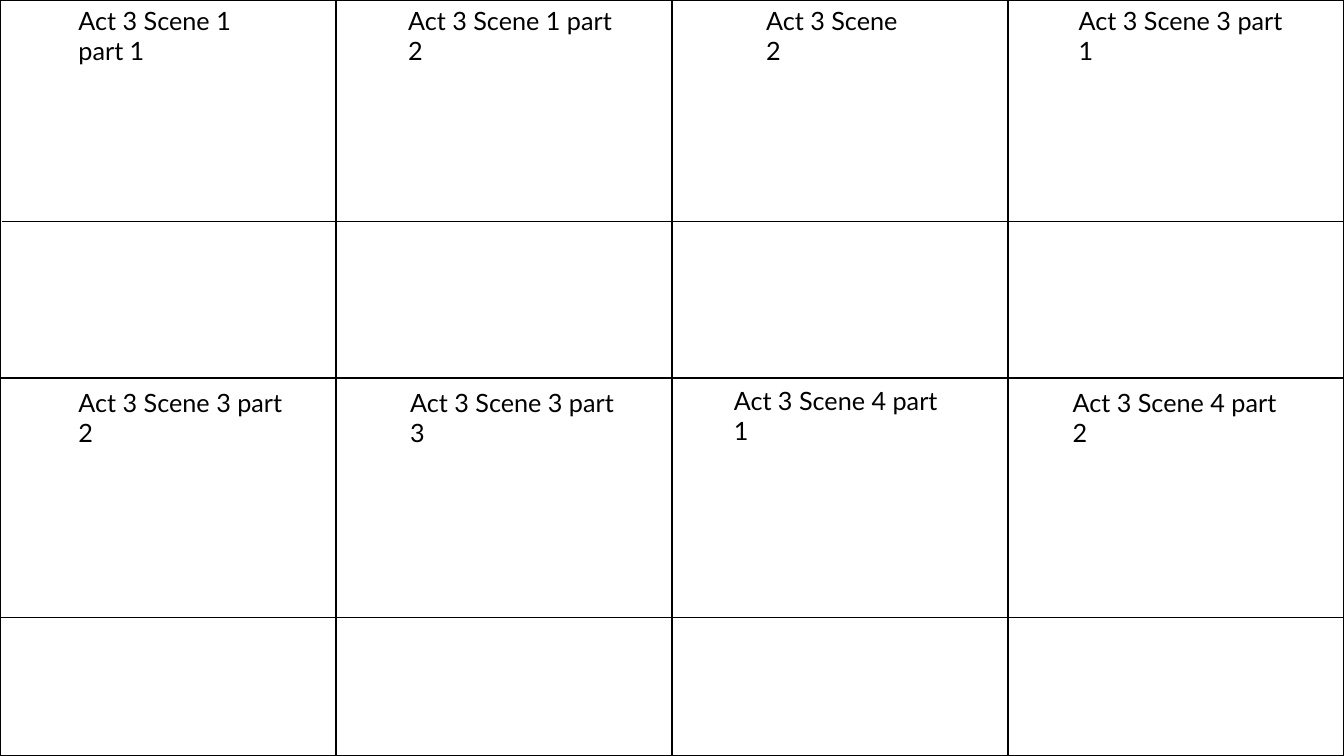
from lxml.etree import SubElement
from pptx import Presentation
from pptx.dml.color import RGBColor
from pptx.enum.shapes import MSO_CONNECTOR as Connector
from pptx.enum.text import MSO_AUTO_SIZE as AutoSize
from pptx.oxml.ns import qn
from pptx.util import Inches, Pt

WIDTH, HEIGHT = 13.33, 7.5
BLACK, WHITE = "000000", "FFFFFF"
LABEL_FRAME = {"word_wrap": True, "auto_size": AutoSize.SHAPE_TO_FIT_TEXT}
LABEL_FONT = {"name": "Lato", "size": Pt(18)}
SCENES = [
    ("Act 3 Scene 1 part 1", 0.68, 0, 2.18),
    ("Act 3 Scene 1 part 2", 3.95, 0, 2.23),
    ("Act 3 Scene 2", 7.5, 0, 1.58),
    ("Act 3 Scene 3 part 1", 10.6, 0, 2.22),
    ("Act 3 Scene 3 part 2", 0.68, 3.79, 2.28),
    ("Act 3 Scene 3 part 3", 3.97, 3.79, 2.27),
    ("Act 3 Scene 4 part 1", 7.18, 3.77, 2.23),
    ("Act 3 Scene 4 part 2", 10.54, 3.79, 2.28),
]
CAPTION_LINES = [(0.02, 2.2), (0, 6.12)]


def color(value):
    """Turn a hex string into a colour."""
    return RGBColor.from_string(value)


def apply_format(target, values):
    """Set each named attribute on the target."""
    for name, value in values.items():
        setattr(target, name, value)


def format_cell(cell):
    """Give a cell a white fill and thin black borders."""
    properties = cell._tc.get_or_add_tcPr()
    for side in ("lnL", "lnR", "lnT", "lnB"):
        border = SubElement(properties, qn(f"a:{side}"), w=str(Pt(1)))
        fill = SubElement(border, qn("a:solidFill"))
        SubElement(fill, qn("a:srgbClr"), val=BLACK)
    cell.fill.solid()
    cell.fill.fore_color.rgb = color(WHITE)


def add_storyboard(slide, left, top, width, height, rows=2, columns=4):
    """Fill the box with an even grid of empty frames."""
    box = [Inches(length) for length in (left, top, width, height)]
    table = slide.shapes.add_table(rows, columns, *box).table
    for column in table.columns:
        column.width = Inches(width / columns)
    for row in table.rows:
        row.height = Inches(height / rows)
    for cell in table.iter_cells():
        format_cell(cell)


def add_scene_label(slide, text, left, top, width, height=0.4):
    """Write a scene name in the given box."""
    box = [Inches(length) for length in (left, top, width, height)]
    frame = slide.shapes.add_textbox(*box).text_frame
    apply_format(frame, LABEL_FRAME)
    run = frame.paragraphs[0].add_run()
    run.text = text
    apply_format(run.font, LABEL_FONT)
    run.font.color.rgb = color(BLACK)


def add_caption_line(slide, left, top, right):
    """Draw the line that parts the drawings from their captions."""
    ends = [Inches(length) for length in (left, top, right, top)]
    connector = slide.shapes.add_connector(Connector.STRAIGHT, *ends)
    connector.line.color.rgb = color(BLACK)
    connector.line.width = Pt(0.5)
    SubElement(connector._element.spPr, qn("a:effectLst"))


def main():
    """Build the storyboard slide and save it."""
    presentation = Presentation()
    apply_format(presentation, {"slide_width": Inches(WIDTH), "slide_height": Inches(HEIGHT)})
    slide = presentation.slides.add_slide(presentation.slide_layouts[6])
    add_storyboard(slide, 0, 0, WIDTH, HEIGHT)
    for scene in SCENES:
        add_scene_label(slide, *scene)
    for left, top in CAPTION_LINES:
        add_caption_line(slide, left, top, WIDTH)
    presentation.save("out.pptx")


if __name__ == "__main__":
    main()
